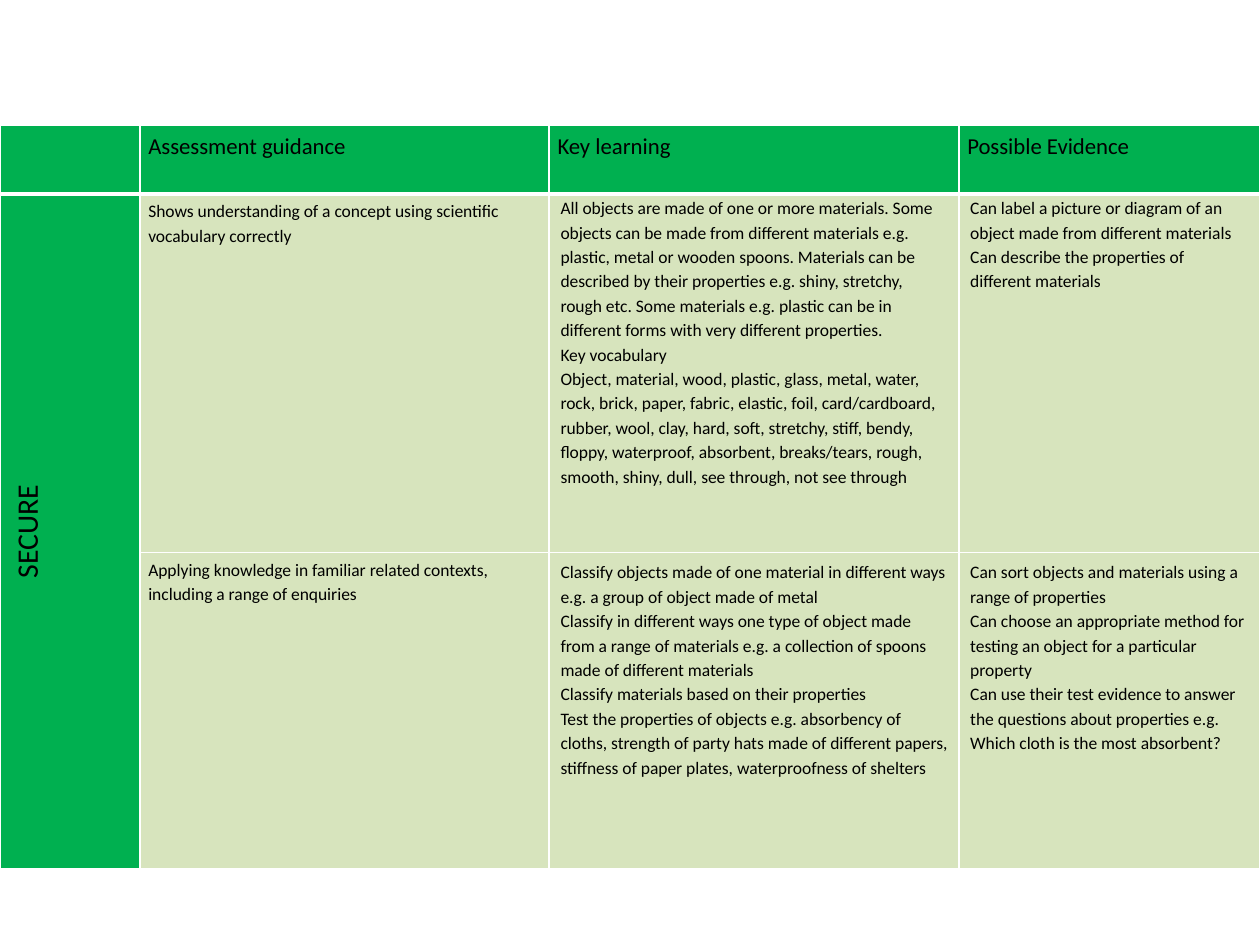
import pptx
import pptx.util
import pptx.dml.color
import pptx.enum.text
import pptx.oxml
import pptx.oxml.ns
import lxml.etree

Cm = pptx.util.Cm
GREEN, PALE, WHITE, BLACK = "00B050", "D7E4BD", "FFFFFF", "000000"
WIDTHS = [2.82, 8.25, 8.26, 6.07]
HEIGHTS = [1.39, 7.22, 6.37]
PLAIN = (0.17, 0.08, 0.17, 0.08)
TIGHT = (0.23, 0.02, 0.23, 0)
LOOSE = (0.23, 0.13, 0.23, 0.13)
HEADS = ["Assessment guidance", "Key learning", "Possible Evidence"]
BODY = [
    [
        (["Shows understanding of a concept using scientific vocabulary correctly"], PLAIN),
        ([
            "All objects are made of one or more materials. Some objects can be made from "
            "different materials e.g. plastic, metal or wooden spoons. Materials can be "
            "described by their properties e.g. shiny, stretchy, rough etc. Some materials "
            "e.g. plastic can be in different forms with very different properties.",
            "Key vocabulary",
            "Object, material, wood, plastic, glass, metal, water, rock, brick, paper, fabric, "
            "elastic, foil, card/cardboard, rubber, wool, clay, hard, soft, stretchy, stiff, "
            "bendy, floppy, waterproof, absorbent, breaks/tears, rough, smooth, shiny, dull, "
            "see through, not see through",
        ], TIGHT),
        ([
            "Can label a picture or diagram of an object made from different materials",
            "Can describe the properties of different materials",
        ], TIGHT),
    ],
    [
        (["Applying knowledge in familiar related contexts, including a range of enquiries"], PLAIN),
        ([
            "Classify objects made of one material in different ways e.g. a group of object "
            "made of metal",
            "Classify in different ways one type of object made from a range of materials e.g. "
            "a collection of spoons made of different materials",
            "Classify materials based on their properties",
            "Test the properties of objects e.g. absorbency of cloths, strength of party hats "
            "made of different papers, stiffness of paper plates, waterproofness of shelters",
        ], LOOSE),
        ([
            "Can sort objects and materials using a range of properties",
            "Can choose an appropriate method for testing an object for a particular property",
            "Can use their test evidence to answer the questions about properties e.g. Which "
            "cloth is the most absorbent?",
        ], LOOSE),
    ],
]


def shade(code):
    """Turn a hex string into a colour."""
    return pptx.dml.color.RGBColor.from_string(code)


def edge(cell, side, width):
    """Draw one white border of a cell."""
    line = lxml.etree.SubElement(
        cell._tc.get_or_add_tcPr(), pptx.oxml.ns.qn("a:ln" + side), w=str(pptx.util.Pt(width)))
    fill = lxml.etree.SubElement(line, pptx.oxml.ns.qn("a:solidFill"))
    lxml.etree.SubElement(fill, pptx.oxml.ns.qn("a:srgbClr"), val=WHITE)


def paint(cell, code, base=1):
    """Give a cell its borders and fill."""
    for side, width in zip("LRTB", (1, 1, 1, base)):
        edge(cell, side, width)
    cell.fill.solid()
    cell.fill.fore_color.rgb = shade(code)


def write(cell, lines, size, pads=PLAIN):
    """Write paragraphs into a cell."""
    (cell.margin_left, cell.margin_top,
     cell.margin_right, cell.margin_bottom) = map(Cm, pads)
    frame = cell.text_frame
    for spot, line in enumerate(lines):
        para = frame.add_paragraph() if spot else frame.paragraphs[0]
        para.line_spacing = 1.15
        run = para.add_run()
        run.text = line
        run.font.size = pptx.util.Pt(size)
        run.font.name = "Calibri"
        run.font.bold = False
        run.font.color.rgb = shade(BLACK)


def label(cell, text):
    """Write the upright label of the merged rows."""
    write(cell, [text], 17)
    cell.text_frame.paragraphs[0].alignment = pptx.enum.text.PP_ALIGN.CENTER
    cell.vertical_anchor = pptx.enum.text.MSO_ANCHOR.MIDDLE
    cell._tc.get_or_add_tcPr().set("vert", "vert270")


def chart(slide, left, top, width, height):
    """Build the assessment table in the given box."""
    table = slide.shapes.add_table(
        len(HEIGHTS), len(WIDTHS), Cm(left), Cm(top), Cm(width), Cm(height)).table
    for col, part in zip(table.columns, WIDTHS):
        col.width = Cm(width * part / sum(WIDTHS))
    for row, part in zip(table.rows, HEIGHTS):
        row.height = Cm(height * part / sum(HEIGHTS))
    for r in range(len(HEIGHTS)):
        for c in range(len(WIDTHS)):
            paint(table.cell(r, c), PALE if r and c else GREEN, 1 if r else 3)
    for c, head in enumerate(HEADS, 1):
        write(table.cell(0, c), [head], 13)
    for r, row in enumerate(BODY, 1):
        for c, (lines, pads) in enumerate(row, 1):
            write(table.cell(r, c), lines, 10, pads)
    table.cell(1, 0).merge(table.cell(2, 0))
    label(table.cell(1, 0), "SECURE")


def main():
    """Build and save the slide."""
    deck = pptx.Presentation()
    deck.slide_width, deck.slide_height = Cm(25.4), Cm(19.05)
    slide = deck.slides.add_slide(deck.slide_layouts[6])
    chart(slide, 0, 2.52, 25.4, 15)
    deck.save("out.pptx")


if __name__ == "__main__":
    main()
